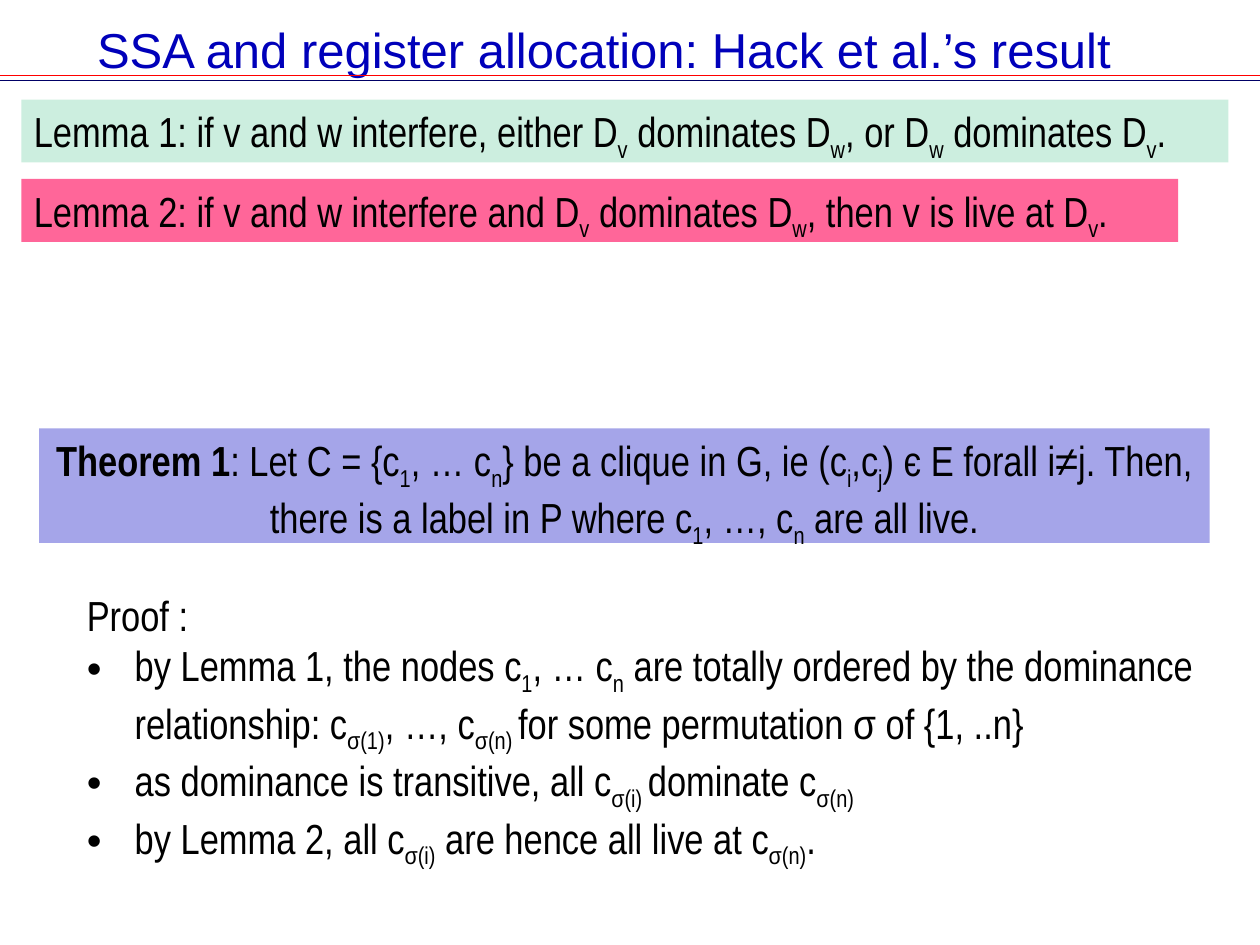
from pptx import Presentation
from pptx import util as u
from pptx.dml.color import RGBColor
from pptx.enum import shapes, text
from pptx.oxml import parse_xml
from pptx.oxml.ns import nsdecls, qn

# Text between two ~ marks is subscript; text between two * marks is bold.
TITLE = "SSA and register allocation: Hack et al.’s result"
RULES = [(0.6, "FF0000"), (0.64, "000066")]
LEFT, RIGHT = text.PP_ALIGN.LEFT, text.PP_ALIGN.CENTER
STATEMENTS = [  # left, top, width, height, fill, alignment, words
    (0.17, 0.79, 9.58, 0.5, "CCEEDF", text.PP_ALIGN.LEFT,
     "Lemma 1: if v and w interfere, either D~v~ dominates D~w~, or D~w~ dominates D~v~."),
    (0.17, 1.42, 9.18, 0.5, "FF6699", text.PP_ALIGN.LEFT,
     "Lemma 2: if v and w interfere and D~v~ dominates D~w~, then v is live at D~v~."),
    (0.31, 3.4, 9.29, 0.91, "A5A5E9", text.PP_ALIGN.CENTER,
     "*Theorem 1*: Let C = {c~1~, … c~n~} be a clique in G, ie (c~i~,c~j~) є E forall i≠j. "
     "Then, there is a label in P where c~1~, …, c~n~ are all live."),
]
PROOF_AREA = (0.59, 4.63, 9.08, 2.12)
PROOF_HEAD = "Proof :"
PROOF_STEPS = [
    "by Lemma 1, the nodes c~1~, … c~n~ are totally ordered by the dominance "
    "relationship: c~σ(1)~, …, c~σ(n) ~for some permutation σ of {1, ..n}",
    "as dominance is transitive, all c~σ(i) ~dominate c~σ(n)~",
    "by Lemma 2, all c~σ(i)~ are hence all live at c~σ(n)~.",
]


def color(value):
    return RGBColor.from_string(value)


def inches(*lengths):
    return [u.Inches(length) for length in lengths]


def style(span, size, font, value):
    span.font.size, span.font.name = u.Pt(size), font
    span.font.color.rgb = color(value)


def write(para, words):
    """Add marked-up words to a paragraph as formatted runs."""
    for i, piece in enumerate(words.split("~")):
        for j, part in enumerate(piece.split("*")):
            if not part:
                continue
            span = para.add_run()
            span.text = part
            style(span, 24, "Arial Narrow", "000000")
            if j % 2:
                span.font.bold = True
            if i % 2:
                span.font._element.set("baseline", "-25000")


def add_bullet(para):
    props = para._p.get_or_add_pPr()
    props.set("marL", str(u.Inches(0.38)))
    props.set("indent", str(-u.Inches(0.38)))
    props.append(parse_xml(f'<a:buFont {nsdecls("a")} typeface="Arial"/>'))
    props.append(parse_xml(f'<a:buChar {nsdecls("a")} char="•"/>'))


deck = Presentation()
deck.slide_width, deck.slide_height = inches(10, 7.5)
page = deck.slides.add_slide(deck.slide_layouts[5])

for y, value in RULES:
    rule = page.shapes.add_connector(
        shapes.MSO_CONNECTOR.STRAIGHT, *inches(0, y, 10, y))
    rule.line.color.rgb, rule.line.width = color(value), u.Pt(1)
    rule._element.find(qn("p:spPr")).append(
        parse_xml(f'<a:effectLst {nsdecls("a")}/>'))

title = page.shapes.title
title.left, title.top, title.width, title.height = inches(0.67, 0.1, 8.91, 0.57)
title.text_frame.text = TITLE
title.text_frame.vertical_anchor = text.MSO_ANCHOR.MIDDLE
title.text_frame.auto_size = text.MSO_AUTO_SIZE.NONE
heading = title.text_frame.paragraphs[0]
heading.alignment = text.PP_ALIGN.LEFT
style(heading.runs[0], 28, "Arial", "0000BA")

for *area, fill, alignment, words in STATEMENTS:
    box = page.shapes.add_shape(shapes.MSO_SHAPE.RECTANGLE, *inches(*area))
    box.shadow.inherit = False
    box.fill.solid()
    box.fill.fore_color.rgb = color(fill)
    box.line.fill.background()
    box.text_frame.word_wrap = True
    box.text_frame.vertical_anchor = text.MSO_ANCHOR.TOP
    para = box.text_frame.paragraphs[0]
    para.alignment = alignment
    write(para, words)

proof = page.shapes.add_textbox(*inches(*PROOF_AREA)).text_frame
proof.word_wrap = True
write(proof.paragraphs[0], PROOF_HEAD)
for step in PROOF_STEPS:
    para = proof.add_paragraph()
    add_bullet(para)
    write(para, step)

deck.save("out.pptx")
